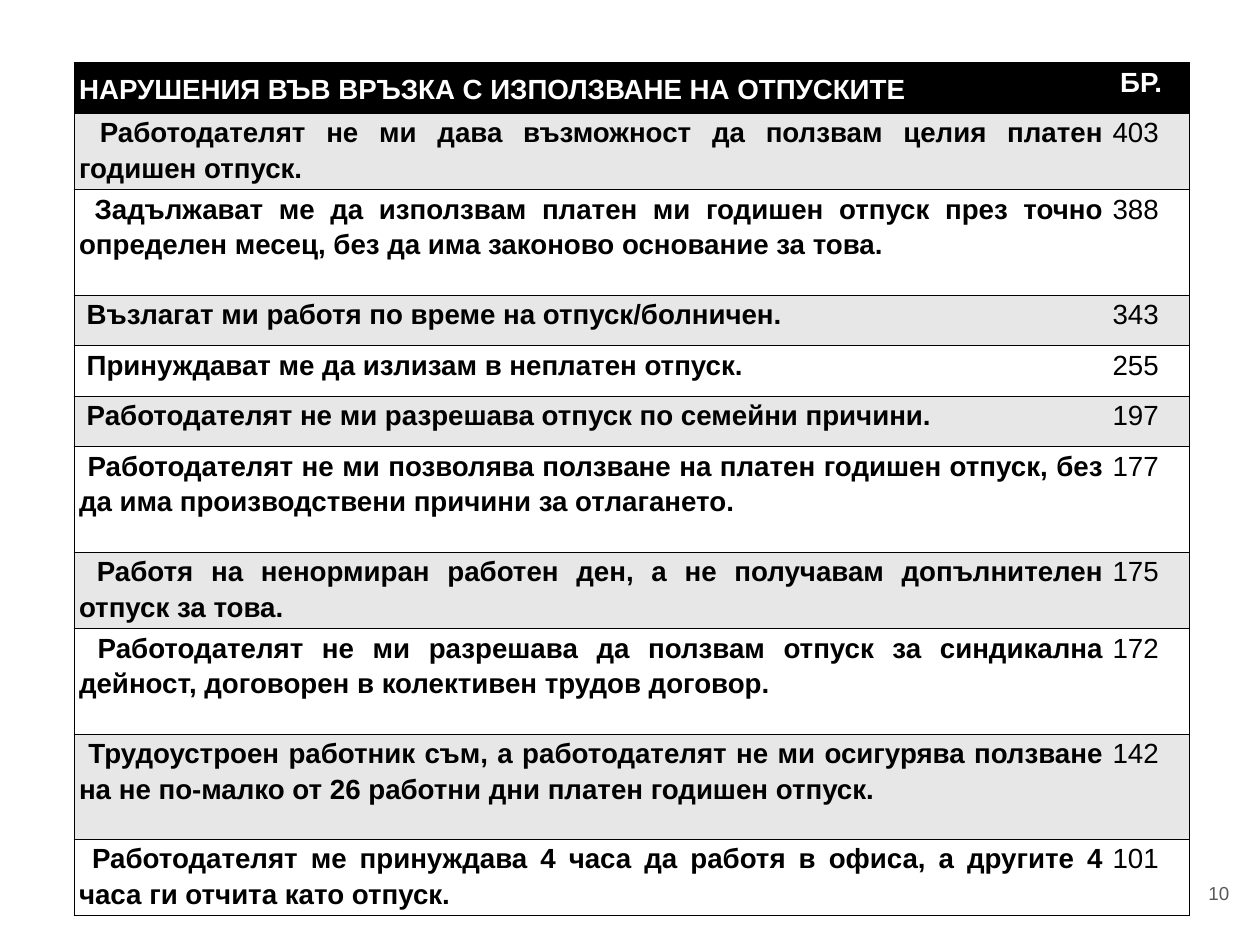
from lxml import etree
from pptx import Presentation
from pptx.dml.color import RGBColor
from pptx.enum.text import MSO_ANCHOR, PP_ALIGN
from pptx.oxml.ns import qn
from pptx.util import Inches, Pt

JUSTIFY, RIGHT = PP_ALIGN.JUSTIFY, PP_ALIGN.RIGHT
TOP, MIDDLE = MSO_ANCHOR.TOP, MSO_ANCHOR.MIDDLE

COLORS = {"black": "000000", "white": "FFFFFF", "band": "E7E7E7", "gray": "595959"}

HEADER = ("НАРУШЕНИЯ ВЪВ ВРЪЗКА С ИЗПОЛЗВАНЕ НА ОТПУСКИТЕ", " БР.")
HEADER_HEIGHT = 0.71
# Violation, number of reports, row height
VIOLATIONS = [
    (" Работодателят не ми дава възможност да ползвам целия платен годишен отпуск.", 403, 0.71),
    (" Задължават ме да използвам платен ми годишен отпуск през точно определен месец, "
     "без да има законово основание за това.", 388, 1.48),
    (" Възлагат ми работя по време на отпуск/болничен.", 343, 0.71),
    (" Принуждават ме да излизам в неплатен отпуск.", 255, 0.71),
    (" Работодателят не ми разрешава отпуск по семейни причини.", 197, 0.71),
    (" Работодателят не ми позволява ползване на платен годишен отпуск, "
     "без да има производствени причини за отлагането.", 177, 1.48),
    (" Работя на ненормиран работен ден, а не получавам допълнителен отпуск за това.", 175, 0.71),
    (" Работодателят не ми разрешава да ползвам отпуск за синдикална дейност, "
     "договорен в колективен трудов договор.", 172, 1.48),
    (" Трудоустроен работник съм, а работодателят не ми осигурява ползване "
     "на не по-малко от 26 работни дни платен годишен отпуск.", 142, 1.48),
    (" Работодателят ме принуждава 4 часа да работя в офиса, "
     "а другите 4 часа ги отчита като отпуск.", 101, 0.73),
]


class SlideBuilder:
    """Holds the style and the current slide."""

    font = "Arial"
    table_size = 28
    number_size = 19

    def __init__(self, slide):
        self.slide = slide

    def set_text(self, paragraph, text, size, color, bold=False, align=JUSTIFY):
        paragraph.text = text
        paragraph.alignment = align
        paragraph.font.name = self.font
        paragraph.font.size = Pt(size)
        paragraph.font.bold = bold
        paragraph.font.color.rgb = RGBColor.from_string(COLORS[color])

    def text_box(self, text, left, top, width, height, inset):
        shape = self.slide.shapes.add_textbox(
            Inches(left), Inches(top), Inches(width), Inches(height))
        frame = shape.text_frame
        frame.word_wrap = True
        frame.vertical_anchor = MIDDLE
        frame.margin_left = frame.margin_right = Inches(inset)
        frame.margin_top = frame.margin_bottom = Inches(inset)
        self.set_text(frame.paragraphs[0], text, self.number_size, "gray", align=RIGHT)

    def borders(self, cell, drawn_sides):
        properties = cell._tc.get_or_add_tcPr()
        for index, side in enumerate("LRTB"):
            line = etree.Element(qn(f"a:ln{side}"), w=str(Pt(1)))
            if side in drawn_sides:
                fill = etree.SubElement(line, qn("a:solidFill"))
                etree.SubElement(fill, qn("a:srgbClr"), val=COLORS["black"])
            else:
                etree.SubElement(line, qn("a:noFill"))
            properties.insert(index, line)

    def cell(self, cell, text, fill, color, bold, sides, anchor=TOP):
        cell.margin_left = cell.margin_right = Inches(0.07)
        cell.margin_top = cell.margin_bottom = 0
        cell.vertical_anchor = anchor
        cell.fill.solid()
        cell.fill.fore_color.rgb = RGBColor.from_string(COLORS[fill])
        paragraph = cell.text_frame.paragraphs[0]
        self.set_text(paragraph, text, self.table_size, color, bold)
        paragraph.line_spacing = 1.15
        self.borders(cell, sides)

    def table(self, left, top, widths, header, rows):
        heights = [HEADER_HEIGHT] + [height for _, _, height in rows]
        table = self.slide.shapes.add_table(
            len(heights), len(widths), Inches(left), Inches(top),
            Inches(sum(widths)), Inches(sum(heights))).table
        for column, width in zip(table.columns, widths):
            column.width = Inches(width)
        for row, height in zip(table.rows, heights):
            row.height = Inches(height)

        # Header row
        self.cell(table.cell(0, 0), header[0], "black", "white", True, "LTB", MIDDLE)
        self.cell(table.cell(0, 1), header[1], "black", "white", True, "RTB")

        # Banded rows
        for index, (violation, count, _) in enumerate(rows, start=1):
            fill = "band" if index % 2 else "white"
            self.cell(table.cell(index, 0), violation, fill, "black", True, "LTB")
            self.cell(table.cell(index, 1), str(count), fill, "black", False, "RTB")


def main():
    presentation = Presentation()
    presentation.slide_width = Inches(17.69)
    presentation.slide_height = Inches(13.27)
    builder = SlideBuilder(presentation.slides.add_slide(presentation.slide_layouts[6]))

    # Slide number
    builder.text_box("10", 16.39, 12.03, 1.06, 1.02, inset=0.19)

    # Table of leave violations
    builder.table(1.04, 0.88, (14.51, 1.15), HEADER, VIOLATIONS)

    presentation.save("out.pptx")


if __name__ == "__main__":
    main()
